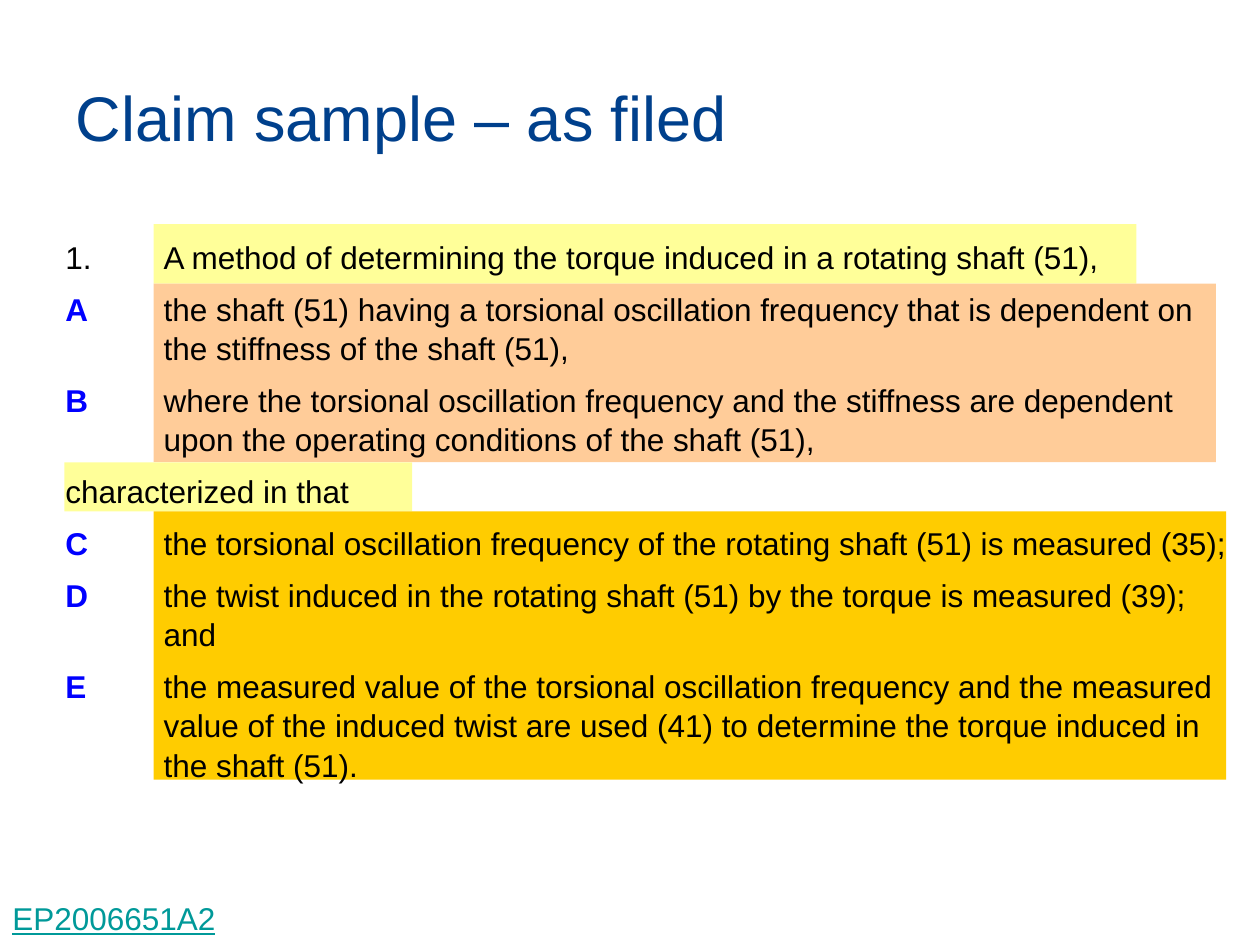
from collections import namedtuple
from dataclasses import dataclass

from pptx import Presentation
from pptx.dml.color import RGBColor
from pptx.enum.shapes import MSO_SHAPE as Shape
from pptx.enum.text import MSO_ANCHOR as Anchor, PP_ALIGN as Align
from pptx.util import Cm, Pt

Box = namedtuple("Box", "left top width height")


@dataclass(frozen=True)
class Theme:
    font: str = "Arial"
    title_size: int = 36
    body_size: int = 18
    title: str = "00408C"
    text: str = "000000"
    label: str = "0000FF"
    reference: str = "009999"
    wording: str = "FFFF99"
    known: str = "FFCC99"
    novel: str = "FFCC00"


THEME = Theme()

CLAIM = [
    ("1.", "A method of determining the torque induced in a rotating shaft (51),"),
    ("A", "the shaft (51) having a torsional oscillation frequency that is "
          "dependent on the stiffness of the shaft (51),"),
    ("B", "where the torsional oscillation frequency and the stiffness are "
          "dependent upon the operating conditions of the shaft (51),"),
    ("", "characterized in that"),
    ("C", "the torsional oscillation frequency of the rotating shaft (51) is measured (35);"),
    ("D", "the twist induced in the rotating shaft (51) by the torque is measured (39); and"),
    ("E", "the measured value of the torsional oscillation frequency and the "
          "measured value of the induced twist are used (41) to determine the "
          "torque induced in the shaft (51)."),
]

LABEL_LEFT, TEXT_LEFT = 0.23, 2.03
HANGING_INDENT = 1.98
# Stacked from the top of the claim: left, width, height, colour
HIGHLIGHTS = [
    (TEXT_LEFT, 19.81, 1.2, THEME.wording),
    (TEXT_LEFT, 21.41, 3.6, THEME.known),
    (LABEL_LEFT, 7.01, 0.99, THEME.wording),
    (TEXT_LEFT, 21.62, 5.41, THEME.novel),
]


def in_cm(box):
    return [Cm(length) for length in box]


def add_text(paragraph, text, size=THEME.body_size, color=THEME.text,
             bold=False, underline=False):
    run = paragraph.add_run()
    run.text = text
    font = run.font
    font.name, font.size = THEME.font, Pt(size)
    font.bold, font.underline = bold, underline
    font.color.rgb = RGBColor.from_string(color)


def add_title(slide, box, text):
    title = slide.shapes.title
    title.left, title.top, title.width, title.height = in_cm(box)
    title.text_frame.vertical_anchor = Anchor.MIDDLE
    paragraph = title.text_frame.paragraphs[0]
    paragraph.alignment = Align.LEFT
    add_text(paragraph, text, size=THEME.title_size, color=THEME.title)


def add_highlights(slide, box):
    top = box.top
    for left, width, height, color in HIGHLIGHTS:
        shape = slide.shapes.add_shape(
            Shape.RECTANGLE, *in_cm((box.left + left, top, width, height)))
        shape.shadow.inherit = False
        shape.fill.solid()
        shape.fill.fore_color.rgb = RGBColor.from_string(color)
        shape.line.fill.background()
        top += height


def add_claim(slide, box):
    """Place the claim features with their labels in a hanging indent."""
    add_highlights(slide, box)
    frame = slide.shapes.add_textbox(
        *in_cm(box._replace(top=box.top + 0.12))).text_frame
    frame.word_wrap = True
    for index, (label, feature) in enumerate(CLAIM):
        paragraph = frame.add_paragraph() if index else frame.paragraphs[0]
        properties = paragraph._p.get_or_add_pPr()
        properties.set("marL", str(Cm(HANGING_INDENT)))
        properties.set("indent", str(-Cm(HANGING_INDENT)))
        paragraph.line_spacing = 1.04
        paragraph.space_before = Pt(0.4 * THEME.body_size if index else 0)
        if label:
            is_letter = label.isalpha()
            add_text(paragraph, label, bold=is_letter,
                     color=THEME.label if is_letter else THEME.text)
            feature = "\t" + feature
        add_text(paragraph, feature)


def add_reference(slide, box, text):
    frame = slide.shapes.add_textbox(*in_cm(box)).text_frame
    frame.word_wrap = True
    add_text(frame.paragraphs[0], text, color=THEME.reference, underline=True)


def main():
    presentation = Presentation()
    presentation.slide_width, presentation.slide_height = Cm(25.4), Cm(19.05)
    slide = presentation.slides.add_slide(presentation.slide_layouts[5])
    add_title(slide, Box(1.27, 0.76, 22.86, 3.18), "Claim sample – as filed")
    add_claim(slide, Box(1.07, 4.52, 24.13, 12.09))
    add_reference(slide, Box(0, 18, 6.6, 1.02), "EP2006651A2")
    presentation.save("out.pptx")


if __name__ == "__main__":
    main()
